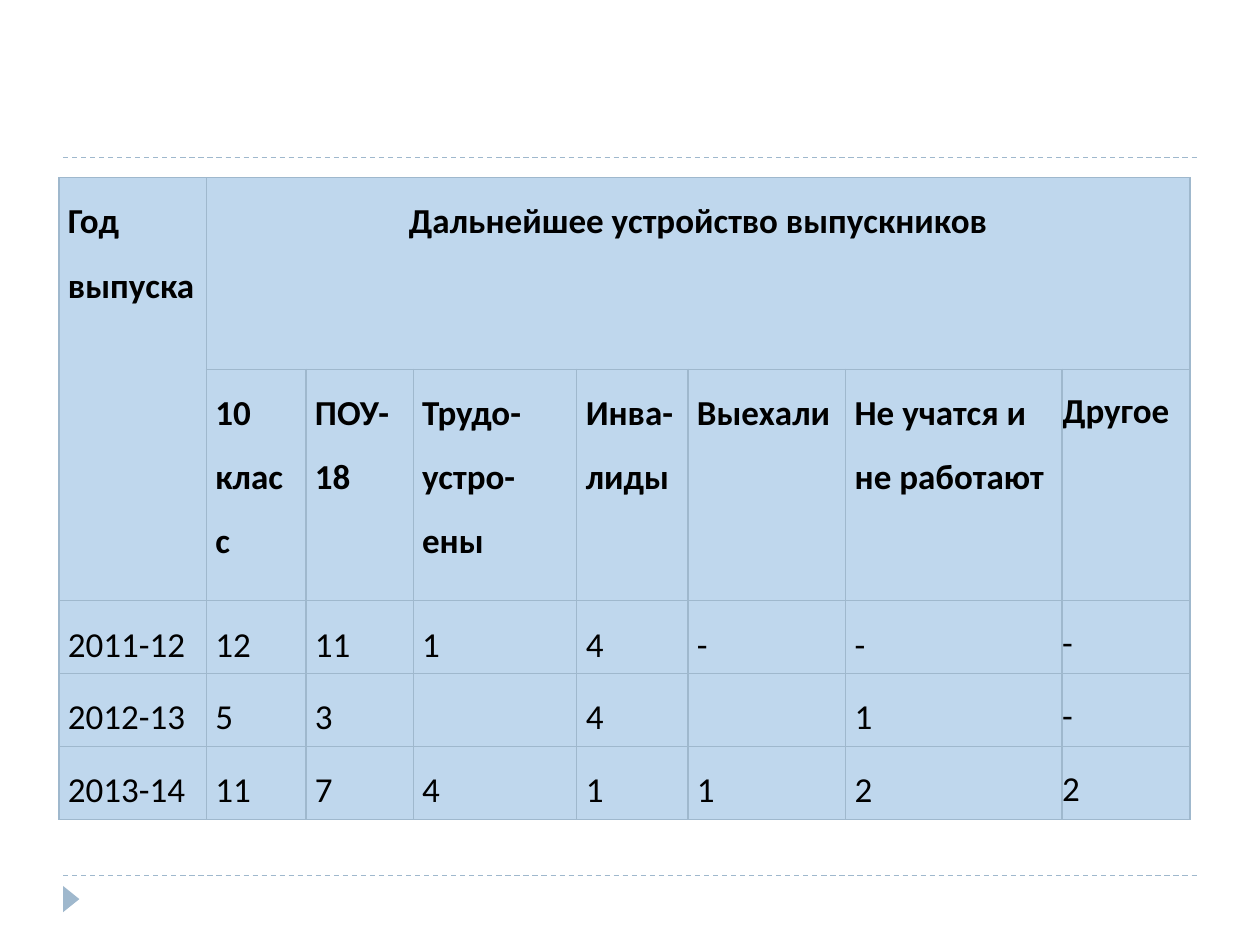
from lxml.etree import SubElement
from pptx import Presentation
from pptx.dml.color import RGBColor
from pptx.enum.dml import MSO_LINE
from pptx.enum.shapes import MSO_CONNECTOR, MSO_SHAPE
from pptx.enum.text import PP_ALIGN
from pptx.oxml import parse_xml
from pptx.oxml.ns import qn
from pptx.util import Cm, Pt

HEAD = "Дальнейшее устройство выпускников"
ROWS = [
    ["Год выпуска", HEAD, "", "", "", "", "", ""],
    ["", "10 класс", "ПОУ-18", "Трудо-\nустро-\nены", "Инва-\nлиды",
     "Выехали", "Не учатся и не работают", "Другое"],
    ["2011-12", "12", "11", "1", "4", "-", "-", "-"],
    ["2012-13", "5", "3", "", "4", "", "1", "-"],
    ["2013-14", "11", "7", "4", "1", "1", "2", "2"],
]
WIDTHS = [2.97, 2.01, 2.16, 3.3, 2.24, 3.18, 4.36, 2.58]
HEIGHTS = [3.86, 4.67, 1.47, 1.47, 1.47]
RULES = [17.65, 3.17]
EDGE, FILL, INK = "9FB8CD", "BFD7ED", "000000"
NS = "http://schemas.openxmlformats.org/drawingml/2006/main"


def tint(text):
    """Return the colour for a hex string."""
    return RGBColor.from_string(text)


def draw_rule(slide, top):
    """Draw a dashed line across the slide."""
    rule = slide.shapes.add_connector(
        MSO_CONNECTOR.STRAIGHT, Cm(1.27), Cm(top), Cm(24.13), Cm(top))
    rule.line.color.rgb = tint(EDGE)
    rule.line.width = Pt(0.75)
    rule.line.dash_style = MSO_LINE.DASH
    SubElement(rule._element.spPr, qn("a:effectLst"))


def draw_mark(slide):
    """Draw the small triangle in the footer."""
    mark = slide.shapes.add_shape(
        MSO_SHAPE.ISOSCELES_TRIANGLE, Cm(1.17), Cm(17.96), Cm(0.53), Cm(0.33))
    mark.rotation = 90
    mark.shadow.inherit = False
    mark.fill.solid()
    mark.fill.fore_color.rgb = tint(EDGE)
    mark.line.fill.background()


def add_edges(cell):
    """Give a cell a thin line on all four sides."""
    props = cell._tc.get_or_add_tcPr()
    for spot, side in enumerate("LRTB"):
        props.insert(spot, parse_xml(
            f'<a:ln{side} xmlns:a="{NS}" w="{Pt(0.75)}"><a:solidFill>'
            f'<a:srgbClr val="{EDGE}"/></a:solidFill></a:ln{side}>'))


def fill_cell(cell, text, bold, last):
    """Write and style one table cell."""
    cell.text = text
    cell.fill.solid()
    cell.fill.fore_color.rgb = tint(FILL)
    add_edges(cell)
    cell.margin_left = cell.margin_right = Cm(0 if last else 0.18)
    cell.margin_top = Cm(0 if last else 0.03)
    cell.margin_bottom = Cm(0)
    for para in cell.text_frame.paragraphs:
        para.line_spacing = 1.5
        para.alignment = PP_ALIGN.CENTER if text == HEAD else PP_ALIGN.LEFT
        para.font.name = "Calibri"
        para.font.size = Pt(20)
        para.font.bold = bold
        para.font.color.rgb = tint(INK)


def draw_table(slide):
    """Build the table of graduates by year."""
    table = slide.shapes.add_table(
        len(ROWS), len(WIDTHS), Cm(1.19), Cm(3.58),
        Cm(sum(WIDTHS)), Cm(sum(HEIGHTS))).table
    table.first_row = table.horz_banding = False
    for col, width in zip(table.columns, WIDTHS):
        col.width = Cm(width)
    for row, height in zip(table.rows, HEIGHTS):
        row.height = Cm(height)
    for r, texts in enumerate(ROWS):
        for c, text in enumerate(texts):
            fill_cell(table.cell(r, c), text, r < 2, c == len(WIDTHS) - 1)
    table.cell(0, 0).merge(table.cell(1, 0))
    table.cell(0, 1).merge(table.cell(0, len(WIDTHS) - 1))


def main():
    """Build and save the slide."""
    deck = Presentation()
    deck.slide_width, deck.slide_height = Cm(25.4), Cm(19.05)
    slide = deck.slides.add_slide(deck.slide_layouts[6])
    for top in RULES:
        draw_rule(slide, top)
    draw_mark(slide)
    draw_table(slide)
    deck.save("out.pptx")


if __name__ == "__main__":
    main()
